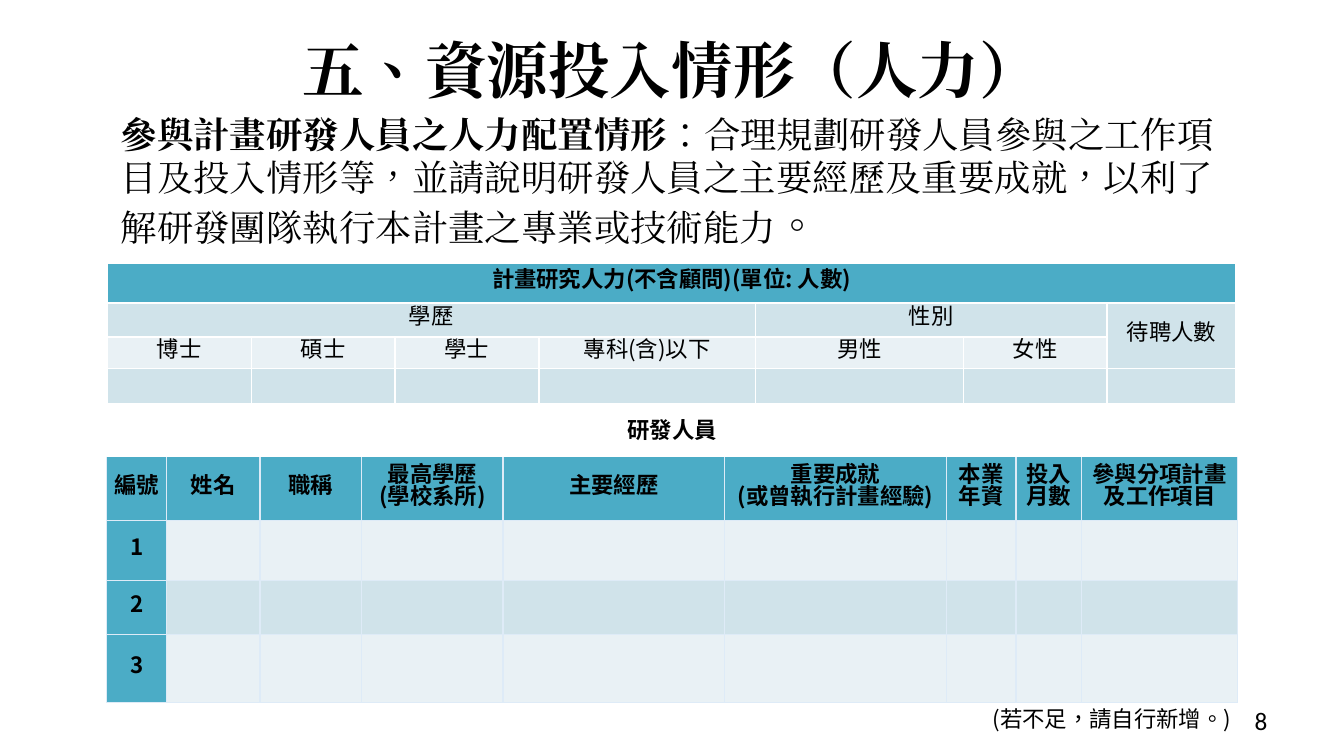
"""Build the slide on the manpower invested in the project."""
from lxml.etree import SubElement
from pptx import Presentation
from pptx.dml.color import RGBColor
from pptx.enum.lang import MSO_LANGUAGE_ID as Lang
from pptx.enum.text import MSO_ANCHOR as Anchor, PP_ALIGN as Align
from pptx.oxml import parse_xml
from pptx.oxml.ns import nsdecls, qn
from pptx.util import Pt

BLACK = RGBColor(0x00, 0x00, 0x00)
WHITE = RGBColor(0xFF, 0xFF, 0xFF)
TEAL = RGBColor(0x4B, 0xAC, 0xC6)
MIST = RGBColor(0xD0, 0xE3, 0xEA)
PALE = RGBColor(0xE9, 0xF1, 0xF5)
ICE = RGBColor(0xDE, 0xEB, 0xF7)
SANS = "Noto Sans CJK SC"
SERIF = "Times New Roman"


def write(paragraph, text, size=16, font=SANS, bold=False, align=Align.LEFT):
    paragraph.alignment = align
    run = paragraph.add_run()
    run.text = text
    run.font.size, run.font.name, run.font.bold = Pt(size), font, bold
    run.font.color.rgb = BLACK
    run.font.language_id = Lang.TRADITIONAL_CHINESE
    SubElement(run.font._element, qn("a:ea")).set("typeface", font)


def set_borders(cell, color, sides):
    for place, side in enumerate("LRTB"):
        paint = f'<a:solidFill><a:srgbClr val="{color}"/></a:solidFill>' if side in sides else "<a:noFill/>"
        line = parse_xml(f'<a:ln{side} {nsdecls("a")} w="12700">{paint}</a:ln{side}>')
        cell._tc.get_or_add_tcPr().insert(place, line)


deck = Presentation()
deck.slide_width, deck.slide_height = Pt(960), Pt(540)
slide = deck.slides.add_slide(deck.slide_layouts[6])

body = dict(size=26, font=SERIF)
texts = [
    ((79.2, 76.3, 801.4, 109.4), Anchor.TOP, 7, [
        ("參與計畫研發人員之人力配置情形", dict(body, bold=True)),
        ("：合理規劃研發人員參與之工作項目及投入情形等，並請說明研發人員之主要經歷及重要成就，"
         "以利了解研發團隊執行本計畫之專業或技術能力", body),
        ("。", dict(body, size=30))]),
    ((48, 21.6, 864, 55.4), Anchor.MIDDLE, 0, [
        ("五、資源投入情形（人力）", dict(size=44, font=SERIF, bold=True, align=Align.CENTER))]),
    ((688.3, 500.4, 224, 28.8), Anchor.MIDDLE, 0, [
        ("8", dict(size=18, font="Calibri", align=Align.RIGHT))]),
    ((702, 500.4, 186.5, 26.6), Anchor.TOP, 0, [("(若不足，請自行新增。)", {})]),
]
for box, anchor, space_before, runs in texts:
    frame = slide.shapes.add_textbox(*map(Pt, box)).text_frame
    frame.word_wrap = True
    frame.vertical_anchor = anchor
    frame.paragraphs[0].space_before = Pt(space_before)
    for text, style in runs:
        write(frame.paragraphs[0], text, **style)

roster = dict(
    corner=(76.3, 293.8), border=ICE,
    widths=[42.5, 67, 72.7, 100.8, 158.4, 158.4, 49.7, 46.8, 111.6],
    heights=[32.4, 45.4, 43.2, 38.2, 49],
    fills=[None, TEAL, PALE, MIST, PALE], side_fill=TEAL, bold_rows=range(5),
    merges=[(0, 0, 0, 8)],
    rows=[["研發人員"],
          ["編號", "姓名", "職稱", "最高學歷\n(學校系所)", "主要經歷", "重要成就\n(或曾執行計畫經驗)",
           "本業年資", "投入月數", "參與分項計畫及工作項目"],
          ["1"], ["2"], ["3"]])
headcount = dict(
    corner=(76.6, 187.9), border=WHITE,
    widths=[102.8, 102.8, 102.8, 154.6, 148.8, 102.4, 92],
    heights=[28.6, 24.2, 22.8, 24.8],
    fills=[TEAL, MIST, PALE, MIST], side_fill=None, bold_rows=[0],
    merges=[(0, 0, 0, 6), (1, 0, 1, 3), (1, 4, 1, 5), (1, 6, 2, 6)],
    rows=[["計畫研究人力(不含顧問)(單位: 人數)"],
          ["學歷", "", "", "", "性別", "", "待聘人數"],
          ["博士", "碩士", "學士", "專科(含)以下", "男性", "女性"],
          []])

for plan in (roster, headcount):
    widths, heights = plan["widths"], plan["heights"]
    table = slide.shapes.add_table(
        len(heights), len(widths), *map(Pt, plan["corner"]), Pt(sum(widths)), Pt(sum(heights))).table
    table.first_row = table.horz_banding = False
    for column, width in zip(table.columns, widths):
        column.width = Pt(width)
    for top, left, bottom, right in plan["merges"]:
        table.cell(top, left).merge(table.cell(bottom, right))
    for r, labels in enumerate(plan["rows"]):
        table.rows[r].height = Pt(heights[r])
        for c in range(len(widths)):
            cell = table.cell(r, c)
            fill = plan["fills"][r]
            if c == 0 and r and plan["side_fill"]:
                fill = plan["side_fill"]
            if fill:
                cell.fill.solid()
                cell.fill.fore_color.rgb = fill
            else:
                cell.fill.background()
            sides = "LRTB"
            if plan["fills"][0] is None and r < 2:
                sides = "LRB" if r else ""
            set_borders(cell, plan["border"], sides)
            cell.margin_left = cell.margin_right = Pt(1.4)
            cell.margin_top = cell.margin_bottom = 0
            cell.vertical_anchor = Anchor.MIDDLE
            label = labels[c] if c < len(labels) else ""
            for n, line in enumerate(label.split("\n")):
                paragraph = cell.text_frame.add_paragraph() if n else cell.text_frame.paragraphs[0]
                paragraph.line_spacing = Pt(16)
                if line:
                    write(paragraph, line, bold=r in plan["bold_rows"], align=Align.CENTER)

deck.save("out.pptx")
